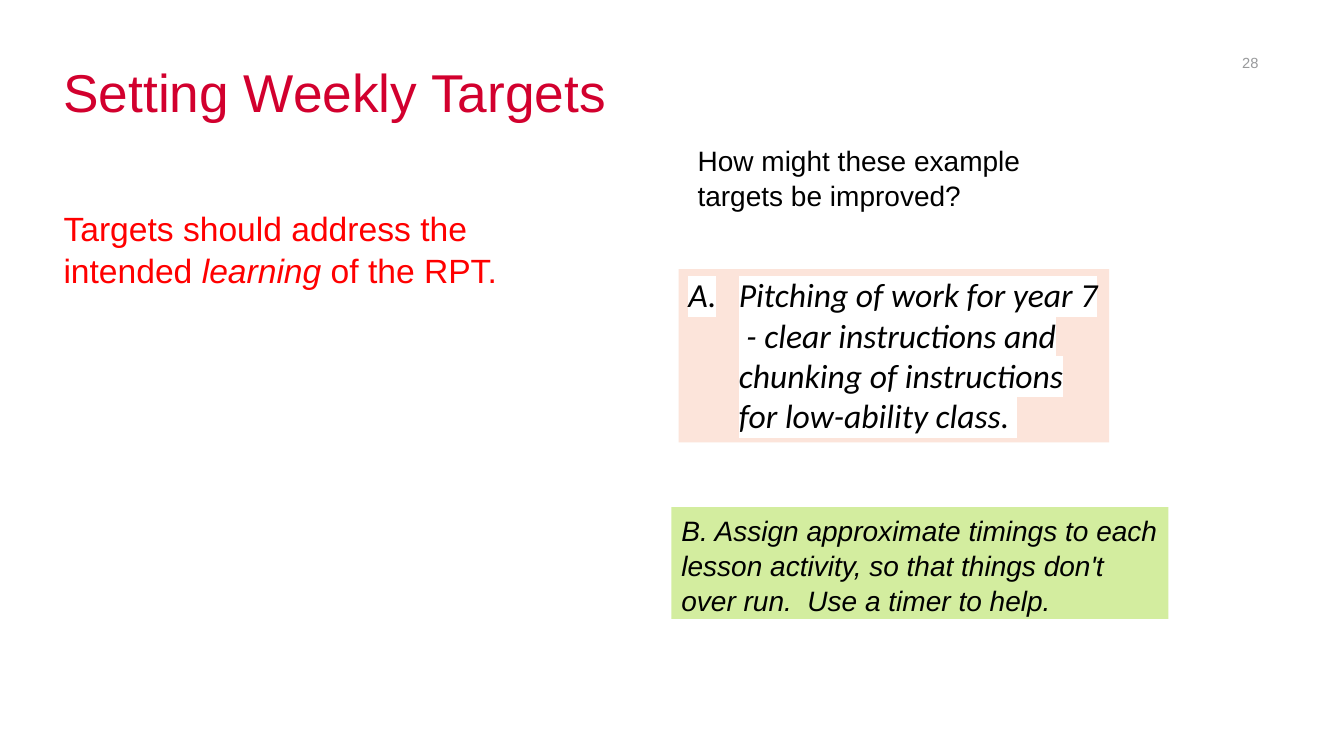
import pptx
import pptx.util
import pptx.dml.color
import pptx.enum.shapes
import pptx.enum.text
import lxml.etree

PX = 9144  # 100 px to the inch
COLORS = {"title": "D2002E", "red": "FF0000", "grey": "98999B", "black": "000000",
          "white": "FFFFFF", "peach": "FCE4DA", "green": "D3ED9F"}
ANCHOR = pptx.enum.text.MSO_ANCHOR
ALIGN = pptx.enum.text.PP_ALIGN

deck = pptx.Presentation()
deck.slide_width, deck.slide_height = 1333 * PX, 750 * PX
slide = deck.slides.add_slide(deck.slide_layouts[6])


def tint(name):
    return pptx.dml.color.RGBColor.from_string(COLORS[name])


def write(text, box, size, color="black", font="Arial", italic=False, fill=None, inset=True,
          anchor=ANCHOR.TOP, align=ALIGN.LEFT, spacing=1.0, bullet=None, mark=None):
    """Add a box of text; parts between asterisks switch the italics."""
    place = [n * PX for n in box]
    if fill:
        shape = slide.shapes.add_shape(pptx.enum.shapes.MSO_SHAPE.RECTANGLE, *place)
        shape.shadow.inherit = False
        shape.fill.solid()
        shape.fill.fore_color.rgb = tint(fill)
        shape.line.fill.background()
    else:
        shape = slide.shapes.add_textbox(*place)
    frame = shape.text_frame
    frame.word_wrap = True
    frame.vertical_anchor = anchor
    if not inset:
        frame.margin_left = frame.margin_right = frame.margin_top = frame.margin_bottom = 0
    para = frame.paragraphs[0]
    para.alignment = align
    para.line_spacing = spacing
    if bullet:
        props = para._p.get_or_add_pPr()
        props.set("marL", str(50 * PX))
        props.set("indent", str(-50 * PX))
        node = lxml.etree.SubElement(props, pptx.oxml.ns.qn("a:buFont"))
        node.set("typeface", "+mj-lt")
        node = lxml.etree.SubElement(props, pptx.oxml.ns.qn("a:buAutoNum"))
        node.set("type", bullet)
    for i, part in enumerate(text.split("*")):
        run = para.add_run()
        run.text = part
        run.font.size = pptx.util.Pt(size)
        run.font.italic = italic != (i % 2 == 1)
        run.font.color.rgb = tint(color)
        if mark:
            light = lxml.etree.Element(pptx.oxml.ns.qn("a:highlight"))
            node = lxml.etree.SubElement(light, pptx.oxml.ns.qn("a:srgbClr"))
            node.set("val", COLORS[mark])
            run._r.rPr.find(pptx.oxml.ns.qn("a:solidFill")).addnext(light)
        run.font.name = font


# Title and page number
write("Setting Weekly Targets", (63, 31, 1207, 91), 38, "title", inset=False,
      anchor=ANCHOR.BOTTOM)
write("28", (958, 42, 300, 40), 10.5, "grey", anchor=ANCHOR.MIDDLE, align=ALIGN.RIGHT)

# Main message
write("Targets should address the intended *learning* of the RPT.", (63, 204, 452, 330), 24,
      "red", inset=False, spacing=1.05)

# Question and the two example targets
write("How might these example targets be improved?", (682, 136, 421, 77), 20, spacing=1.04)
write("Pitching of work for year 7  - clear instructions and chunking of instructions "
      "for low-ability class. ", (673, 267, 427, 172), 24, font="Calibri", italic=True,
      fill="peach", bullet="alphaUcPeriod", mark="white")
write("B. Assign approximate timings to each lesson activity, so that things don't over run. "
      " Use a timer to help.", (666, 503, 493, 111), 20, italic=True, fill="green",
      spacing=1.04)

deck.save("out.pptx")
